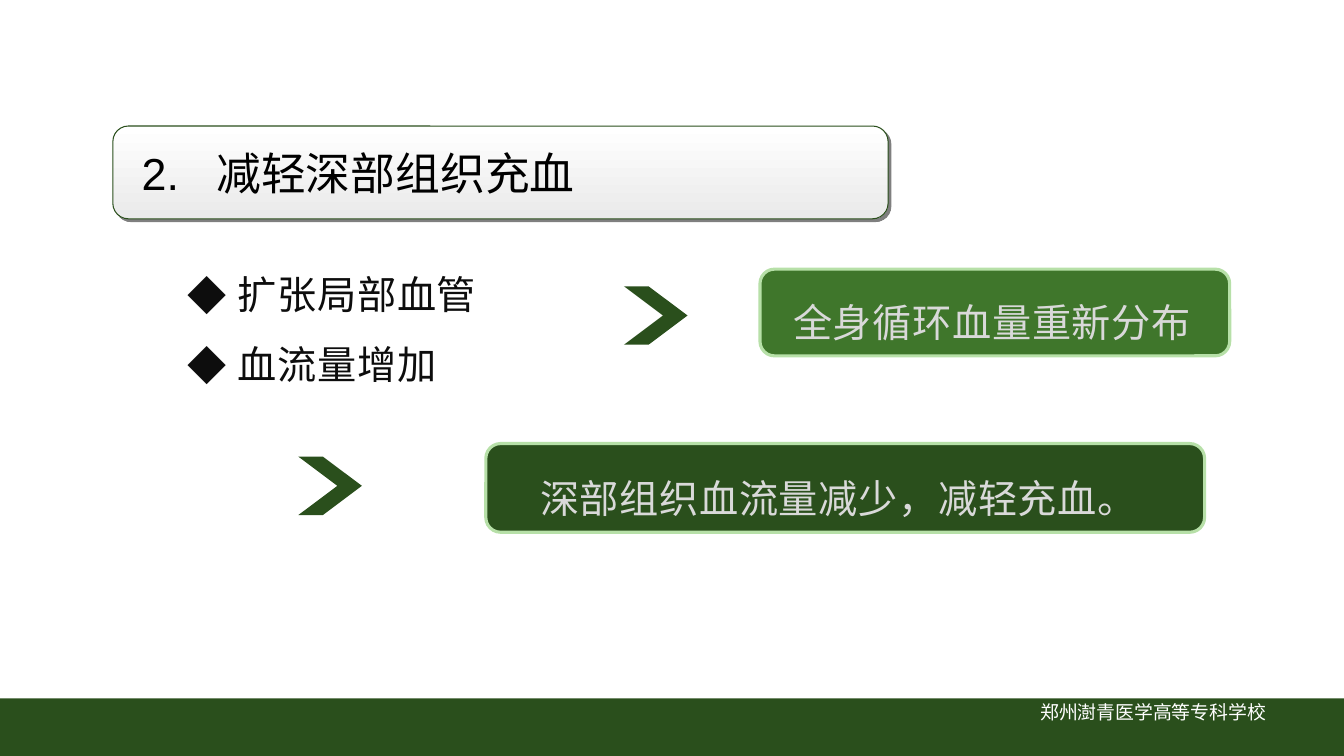
"""Build the slide on how deep-tissue congestion is relieved."""
from lxml import etree
from pptx import Presentation
from pptx.dml.color import RGBColor
from pptx.enum.shapes import MSO_SHAPE
from pptx.enum.text import MSO_ANCHOR, PP_ALIGN
from pptx.oxml import parse_xml
from pptx.oxml.ns import nsdecls, qn
from pptx.util import Inches, Pt

RECT, ROUND, CHEVRON = MSO_SHAPE.RECTANGLE, MSO_SHAPE.ROUNDED_RECTANGLE, MSO_SHAPE.CHEVRON
TOP, MIDDLE = MSO_ANCHOR.TOP, MSO_ANCHOR.MIDDLE
LEFT, CENTER = PP_ALIGN.LEFT, PP_ALIGN.CENTER
THEME = {
    "dark": "2A4F1C", "green": "3F762B", "edge": "B7E0A8", "white": "FFFFFF",
    "silver": "EAEAEA", "black": "000000", "ink": "0D0D0D", "pale": "D9D9D9",
    "latin": "Arial", "chinese": "Noto Sans CJK SC",
    "title": 32, "body": 28, "footer": 13.5,
}
BODY_SPACING = {"line_spacing": 1.25, "space_after": Pt(8)}

deck = Presentation()
deck.slide_width, deck.slide_height = Inches(13.333), Inches(7.5)
page = deck.slides.add_slide(deck.slide_layouts[6])


def add_box(kind, area, fill=None, edge=None, weight=2.25):
    """Add a shape whose area is given in percent of the slide."""
    sides = (deck.slide_width, deck.slide_height) * 2
    box = page.shapes.add_shape(kind, *(int(side * share / 100) for side, share in zip(sides, area)))
    box.shadow.inherit = False
    for part, colour in ((box.fill, fill), (box.line.fill, edge)):
        if colour:
            part.solid()
            part.fore_color.rgb = RGBColor.from_string(THEME[colour])
        else:
            part.background()
    if edge:
        box.line.width = Pt(weight)
    return box


def write(box, lines, size, colour, font="chinese", anchor=TOP, align=LEFT,
          spacing=None, indent=None, bullet=None, tracking=0):
    """Write one paragraph per line, with an optional hanging indent and bullet."""
    frame = box.text_frame
    frame.word_wrap, frame.vertical_anchor = True, anchor
    for index, line in enumerate(lines):
        para = frame.add_paragraph() if index else frame.paragraphs[0]
        if indent:
            margin, hang = indent
            props = para._p.get_or_add_pPr()
            props.set("marL", str(Inches(margin)))
            props.set("indent", str(-Inches(hang)))
            if bullet:
                etree.SubElement(props, qn("a:buFont")).set("typeface", THEME["chinese"])
                etree.SubElement(props, qn("a:buChar")).set("char", bullet)
        for name, value in {"alignment": align, **(spacing or {})}.items():
            setattr(para, name, value)
        span = para.add_run()
        span.text = line
        for name, value in {"size": Pt(THEME[size]), "name": THEME[font]}.items():
            setattr(span.font, name, value)
        span.font.color.rgb = RGBColor.from_string(THEME[colour])
        run_props = span._r.get_or_add_rPr()
        run_props.set("spc", str(tracking))
        etree.SubElement(run_props, qn("a:ea")).set("typeface", THEME["chinese"])


add_box(RECT, (0, 92.4, 100, 7.6), "dark")
school = add_box(RECT, (71.63, 92, 28.37, 6.13))
write(school, ["郑州澍青医学高等专科学校"], "footer", "white", align=CENTER)

title = add_box(ROUND, (8.4, 16.67, 57.68, 12.27), "white", "dark", 0.75)
title.fill.gradient()
title.fill.gradient_angle = 270
for stop, position, colour in zip(title.fill.gradient_stops, (0, 1), ("white", "silver")):
    stop.position = position
    stop.color.rgb = RGBColor.from_string(THEME[colour])
title._element.spPr.find(qn("a:effectLst")).append(parse_xml(
    f'<a:outerShdw {nsdecls("a")} blurRad="0" dist="{Pt(2.8)}" dir="2700000" algn="ctr" rotWithShape="0">'
    f'<a:srgbClr val="{THEME["black"]}"><a:alpha val="50000"/></a:srgbClr></a:outerShdw>'))
title.text_frame.margin_left = Inches(0.24)
write(title, ["2.\t减轻深部组织充血"], "title", "black", "latin", MIDDLE, indent=(0.74, 0.74))

effects = add_box(RECT, (2.18, 33.5, 45, 18.4))
for side, inset in {"left": 0.12, "right": 0.12, "top": 0.04, "bottom": 0.04}.items():
    setattr(effects.text_frame, f"margin_{side}", Inches(inset))
write(effects, ["扩张局部血管", "血流量增加"], "body", "ink", anchor=MIDDLE,
      spacing=BODY_SPACING, indent=(1.95, 0.5), bullet="◆", tracking=50)

RESULTS = (
    ("全身循环血量重新分布", "green", (46.43, 37.87),
     (56.55, 35.6, 34.95, 11.47), (58.28, 37.2, 32.18, 8.4)),
    ("深部组织血流量减少，减轻充血。", "dark", (22.2, 60.4),
     (36.15, 58.67, 53.48, 11.73), (39.45, 60.53, 48.08, 8.13)),
)
for wording, colour, arrow_corner, panel_area, label_area in RESULTS:
    arrow = add_box(CHEVRON, (*arrow_corner, 4.73, 7.73), "dark")
    arrow.adjustments[0] = 0.668
    add_box(ROUND, panel_area, colour, "edge")
    label = add_box(RECT, label_area, colour)
    write(label, [wording], "body", "pale", spacing=BODY_SPACING, tracking=50)

deck.save("out.pptx")
